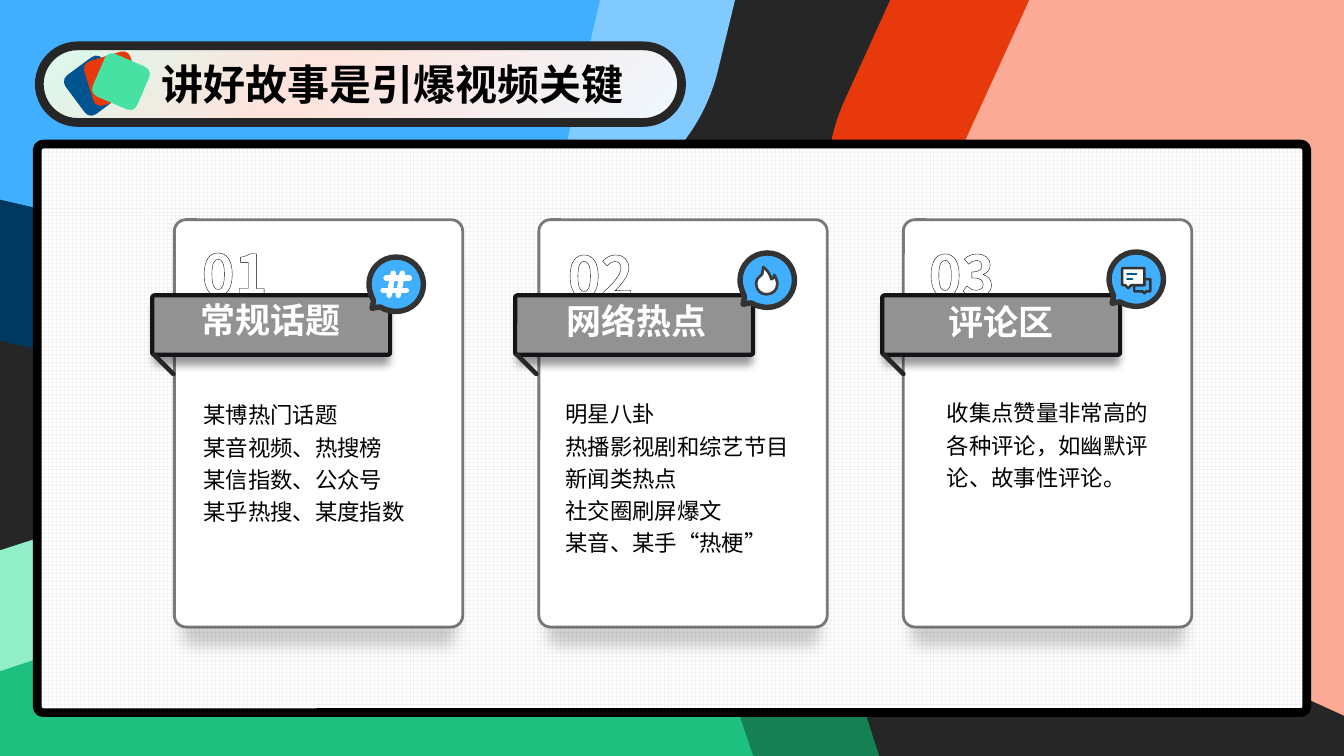
"""Build the slide on storytelling: three topic cards on a colourful backdrop."""
from dataclasses import dataclass
from typing import Optional

from lxml.etree import SubElement
from pptx import Presentation
from pptx.dml.color import RGBColor
from pptx.enum.dml import MSO_PATTERN
from pptx.enum.shapes import MSO_CONNECTOR, MSO_SHAPE
from pptx.enum.text import MSO_ANCHOR, MSO_AUTO_SIZE, PP_ALIGN
from pptx.oxml import parse_xml
from pptx.oxml.ns import nsdecls, qn
from pptx.util import Emu, Inches, Pt

COLUMNS, ROWS = 1333, 750
CELL = Inches(0.01)
FONT = "Noto Sans CJK SC"
COLORS = {
    "black": "000000", "white": "FFFFFF", "ink": "262626", "charcoal": "333333",
    "slate": "3C3C3C", "edge": "131318", "gray": "929292", "mist": "F2F2F2",
    "mint": "91EEC8", "forest": "148054", "green": "1EC07F", "jade": "47E2A3",
    "red": "E7390C", "salmon": "FAAA95", "sky": "80CAFF", "blue": "40AFFF",
    "navy": "003860", "ocean": "005490",
    "ice": "EFF8FF", "blush": "FDE3DC", "dew": "DAF9ED",
}
Outline = tuple[tuple[float, ...], ...]
Box = tuple[float, float, float, float]


@dataclass(frozen=True)
class Patch:
    outline: Outline
    fill: Optional[str]
    line: Optional[str] = None
    weight: float = 0


@dataclass(frozen=True)
class Stroke:
    start: tuple[float, float]
    end: tuple[float, float]
    color: str
    weight: float


@dataclass(frozen=True)
class TextStyle:
    size: float
    color: Optional[str] = "black"
    bold: bool = False
    align: PP_ALIGN = PP_ALIGN.LEFT
    spacing: object = 1.0


@dataclass(frozen=True)
class Card:
    number: str
    number_at: tuple[float, float]
    label: str
    label_at: tuple[float, float]
    tab_left: float
    bubble_at: tuple[float, float]
    icon: tuple
    body_box: Box
    lines: tuple[str, ...]


TITLE = TextStyle(30, bold=True, align=PP_ALIGN.JUSTIFY)
BODY = TextStyle(16, spacing=1.2)
NUMBER = TextStyle(40, color=None, bold=True, spacing=1.5)
LABEL = TextStyle(25, "white", True, PP_ALIGN.JUSTIFY, Pt(15))

BACKDROP = (
    Patch(((456, 407), (528, 406, 595, 452, 618, 523), (691, 750), (0, 750), (0, 546),
           (406, 415), (423, 410, 440, 407, 456, 407)), "mint"),
    Patch(((653, 510), (734, 509, 810, 560, 837, 642), (872, 750), (0, 750), (0, 714),
           (596, 519), (615, 513, 634, 510, 653, 510)), "forest"),
    Patch(((537, 495), (609, 493, 676, 538, 700, 610), (747, 750), (0, 750), (0, 666),
           (487, 504), (503, 498, 520, 495, 537, 495)), "green"),
    Patch(((883, 0), (1333, 0), (1333, 534), (933, 352), (837, 308, 794, 195, 838, 99)), "red"),
    Patch(((1021, 0), (1333, 0), (1333, 710), (960, 540), (875, 502, 838, 402, 876, 318)), "salmon"),
    Patch(((0, 0), (729, 0), (713, 66), (690, 169, 587, 233, 485, 209), (0, 97)), "sky"),
    Patch(((0, 0), (583, 0), (523, 258), (499, 364, 394, 429, 288, 405), (0, 338)), "navy"),
    Patch(((0, 0), (595, 0), (559, 155), (538, 246, 448, 302, 357, 281), (0, 198)), "blue"),
)
BUBBLE = Patch(((27, 54), (42, 54, 54, 42, 54, 27), (54, 12, 42, 0, 27, 0), (12, 0, 0, 12, 0, 27),
                (0, 31, 1, 34, 2, 37), (3, 39, 3, 41, 4, 42), (5, 43, 4, 46, 3, 51),
                (8, 50, 11, 49, 12, 50), (13, 51, 15, 51, 16, 52), (20, 53, 23, 54, 27, 54)),
               "blue", "charcoal", 3.88)
HASH = tuple(Stroke(start, end, "white", 3.88) for start, end in (
    ((17, 21), (40, 21)), ((24, 16), (20, 38)), ((33, 16), (29, 38)), ((14, 33), (37, 33))))
FLAME = (Patch(((26, 41), (32, 41, 37, 37, 37, 31), (37, 30, 37, 28, 36, 26), (35, 23, 35, 23, 34, 22),
                (34, 25, 32, 26, 31, 26), (31, 26, 30, 22, 28, 19), (27, 17, 24, 15, 23, 14),
                (23, 16, 22, 19, 22, 21), (21, 22, 21, 22, 20, 23), (18, 25, 18, 25, 17, 26),
                (16, 28, 16, 30, 16, 31), (16, 37, 21, 41, 26, 41)), "white", "slate", 1.94),)
CHAT = (
    Patch(((33, 39), (25, 39), (25, 33), (35, 33), (35, 27), (41, 27), (41, 39), (37, 39), (35, 41)),
          None, "charcoal", 1.75),
    Patch(((13, 16), (35, 16), (35, 33), (22, 33), (19, 36), (16, 33), (13, 33)),
          "white", "charcoal", 1.75),
    Stroke((18, 27), (23, 27), "ocean", 1.75),
    Stroke((18, 22), (27, 22), "ocean", 1.75),
)
CARDS = (
    Card("01", (200, 204), "常规话题", (189, 312), 151, (366, 255), HASH, (192, 388, 286, 137),
         ("某博热门话题", "某音视频、热搜榜", "某信指数、公众号", "某乎热搜、某度指数")),
    Card("02", (563, 206), "网络热点", (552, 313), 511, (734, 251), FLAME, (551, 387, 252, 169),
         ("明星八卦", "热播影视剧和综艺节目", "新闻类热点", "社交圈刷屏爆文", "某音、某手“热梗”")),
    Card("03", (921, 205), "评论区", (931, 314), 875, (1100, 250), CHAT, (929, 386, 224, 137),
         ("收集点赞量非常高的各种评论，如幽默评论、故事性评论。",)),
)


def cells(*counts: float) -> list[Emu]:
    return [Emu(round(count * CELL)) for count in counts]


def rgb(name: str) -> RGBColor:
    return RGBColor.from_string(COLORS[name])


def paint(shape, fill: Optional[str], line: Optional[str] = None, weight: float = 0) -> None:
    shape.shadow.inherit = False
    if fill:
        shape.fill.solid()
        shape.fill.fore_color.rgb = rgb(fill)
    else:
        shape.fill.background()
    if line:
        shape.line.color.rgb = rgb(line)
        shape.line.width = Pt(weight)
    else:
        shape.line.fill.background()


def hatch(fill, pattern: MSO_PATTERN) -> None:
    fill.patterned()
    fill.pattern = pattern
    fill.fore_color.rgb = rgb("mist")
    fill.back_color.rgb = rgb("white")


def add_opacity(color, percent: float) -> None:
    SubElement(color, qn("a:alpha"), val=str(percent * 1000))


def add_shadow(shape, opacity: int, blur: float, distance: float, scale: int) -> None:
    effects = shape._element.spPr.find(qn("a:effectLst"))
    shadow = SubElement(effects, qn("a:outerShdw"), blurRad=str(Pt(blur)), dist=str(Pt(distance)),
                        dir="5400000", sx=str(scale * 1000), sy=str(scale * 1000), algn="t", rotWithShape="0")
    add_opacity(SubElement(shadow, qn("a:srgbClr"), val=COLORS["black"]), opacity)


def add_round(shapes, box: Box, corner: float, fill: str, line: Optional[str] = None, weight: float = 0):
    shape = shapes.add_shape(MSO_SHAPE.ROUNDED_RECTANGLE, *cells(*box))
    shape.adjustments[0] = corner
    paint(shape, fill, line, weight)
    return shape


def bend(shape, outline: Outline, left: float, top: float) -> None:
    sides = list(shape._element.iter(qn("a:lnTo")))
    for side, segment in zip(sides, outline[1:]):
        if len(segment) == 6:
            curve = parse_xml(f'<a:cubicBezTo {nsdecls("a")}/>')
            for x, y in zip(segment[::2], segment[1::2]):
                across, down = cells(left + x, top + y)
                SubElement(curve, qn("a:pt"), x=str(across - shape.left), y=str(down - shape.top))
            side.getparent().replace(side, curve)


def draw(shapes, item, left: float = 0, top: float = 0) -> None:
    if isinstance(item, Stroke):
        ends = [cells(left + x, top + y) for x, y in (item.start, item.end)]
        line = shapes.add_connector(MSO_CONNECTOR.STRAIGHT, *ends[0], *ends[1])
        line.line.color.rgb = rgb(item.color)
        line.line.width = Pt(item.weight)
        line.line._get_or_add_ln().set("cap", "rnd")
        SubElement(line._element.spPr, qn("a:effectLst"))
        return
    points = [cells(left + segment[-2], top + segment[-1]) for segment in item.outline]
    builder = shapes.build_freeform(*points[0])
    builder.add_line_segments(points[1:], close=True)
    shape = builder.convert_to_shape()
    bend(shape, item.outline, left, top)
    paint(shape, item.fill, item.line, item.weight)


def write(shape, text: str, style: TextStyle, wrap: bool = True) -> None:
    frame = shape.text_frame
    frame.text = text
    frame.word_wrap = wrap
    frame.auto_size = MSO_AUTO_SIZE.NONE
    frame.vertical_anchor = MSO_ANCHOR.TOP
    for para in frame.paragraphs:
        properties = para._p.get_or_add_pPr()
        properties.set("marL", "0")
        properties.set("indent", "0")
        SubElement(properties, qn("a:buNone"))
        para.alignment, para.line_spacing, para.space_before = style.align, style.spacing, Pt(0)
        for span in para.runs:
            span.font.size, span.font.bold, span.font.name = Pt(style.size), style.bold, FONT
            SubElement(span._r.rPr, qn("a:ea"), typeface=FONT)
            if style.color:
                span.font.color.rgb = rgb(style.color)


def place(page, holder, box: Box) -> None:
    holder.left, holder.top, holder.width, holder.height = cells(*box)
    page.shapes._spTree.append(holder._element)


def add_header(page) -> None:
    pill = add_round(page.shapes, (39, 45.5, 637, 76), 0.5, "white", "ink", 6.25)
    stops = "".join(f'<a:gs pos="{pos}000"><a:srgbClr val="{COLORS[name]}"/></a:gs>'
                    for pos, name in ((0, "ice"), (59, "blush"), (100, "dew")))
    gradient = parse_xml(f'<a:gradFill {nsdecls("a")}><a:gsLst>{stops}</a:gsLst><a:path path="circle">'
                         '<a:fillToRect l="100000" t="100000"/></a:path></a:gradFill>')
    properties = pill._element.spPr
    properties.replace(properties.find(qn("a:solidFill")), gradient)
    for left, top, turn, fill in ((69, 62, 53.4, "ocean"), (87, 55, 342.8, "red"), (96, 58, 23.3, "jade")):
        add_round(page.shapes, (left, top, 48, 46), 0.17, fill).rotation = turn
    place(page, page.shapes.title, (150.5, 53, 487, 61))
    write(page.shapes.title, "讲好故事是引爆视频关键", TITLE)


def add_card(page, card: Card, index: int, holder) -> None:
    sheet = add_round(page.shapes, (173 + 361.5 * index, 218, 286, 404), 0.04, "white", "slate", 2)
    add_opacity(sheet.line._get_or_add_ln().find(".//" + qn("a:srgbClr")), 68)
    add_shadow(sheet, 19, 10, 30, 94)
    place(page, holder, card.body_box)
    write(holder, "\n".join(card.lines), BODY)

    shapes = page.shapes.add_group_shape().shapes
    number = shapes.add_textbox(*cells(*card.number_at, 69, 89))
    frame = number.text_frame
    frame.margin_left = frame.margin_top = frame.margin_right = frame.margin_bottom = 0
    write(number, card.number, NUMBER, wrap=False)
    span = frame.paragraphs[0].runs[0]
    hatch(span.font.fill, MSO_PATTERN.WIDE_UPWARD_DIAGONAL)
    span._r.rPr.insert(0, parse_xml(f'<a:ln {nsdecls("a")} w="{Pt(1.75)}"><a:solidFill>'
                                    f'<a:srgbClr val="{COLORS["black"]}"/></a:solidFill></a:ln>'))
    tab = add_round(shapes, (card.tab_left, 293, 236, 59), 0.04, "gray", "edge", 3)
    add_shadow(tab, 40, 6, 7, 97)
    draw(shapes, Stroke((2, 59), (21, 78), "ink", 3.25), card.tab_left, 293)
    write(shapes.add_textbox(*cells(*card.label_at, 180, 34)), card.label, LABEL)
    for item in (BUBBLE, *card.icon):
        draw(shapes, item, *card.bubble_at)


def main() -> None:
    deck = Presentation()
    deck.slide_width, deck.slide_height = cells(COLUMNS, ROWS)
    page = deck.slides.add_slide(deck.slide_layouts.get_by_name("Comparison"))
    page.background.fill.solid()
    page.background.fill.fore_color.rgb = rgb("ink")
    holders = list(page.placeholders)[1:]
    for patch in BACKDROP:
        draw(page.shapes, patch)
    panel = add_round(page.shapes, (37, 143, 1259, 564), 0.01, "white", "black", 6.25)
    hatch(panel.fill, MSO_PATTERN.LARGE_GRID)
    add_header(page)
    for index, (card, holder) in enumerate(zip(CARDS, holders)):
        add_card(page, card, index, holder)
    for holder in holders[len(CARDS):]:
        page.shapes._spTree.remove(holder._element)
    deck.save("out.pptx")


if __name__ == "__main__":
    main()
